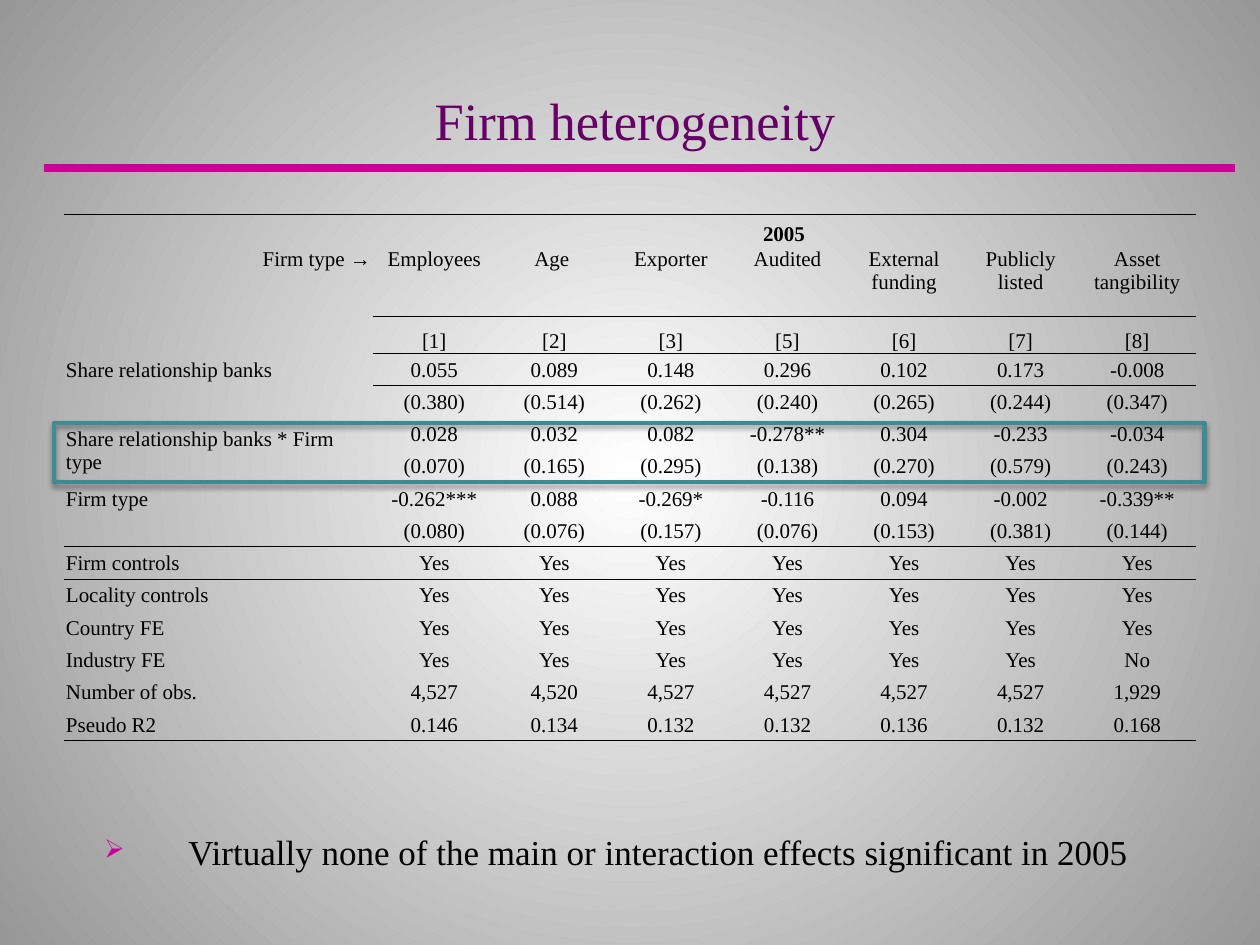
from dataclasses import dataclass
from typing import Any

from lxml import etree
from pptx import Presentation
from pptx import oxml
from pptx import util as u
from pptx.dml import color
from pptx.enum import shapes, text
from pptx.oxml import ns

BLACK, PURPLE, MAGENTA, TEAL = "000000", "660066", "CC0099", "3C8C93"
NO_STYLE = "{2D5ABB26-0587-4C30-8999-92F81FD0307C}"
FONT = "Times New Roman"
COLUMN_WIDTHS = [6.21, 2.49] + [2.35] * 6
ROW_HEIGHTS = [0.64, 1.42, 0.74] + [0.65] * 11 + [0.66]
YES = ["Yes"] * 7
RESULTS = [
    ["", "2005", "", "", "", "", "", ""],
    ["Firm type →", "Employees", "Age ", "Exporter", "Audited", "External funding", "Publicly listed",
     "Asset tangibility"],
    ["", "[1]", "[2]", "[3]", "[5]", "[6]", "[7]", "[8]"],
    ["Share relationship banks", "0.055", "0.089", "0.148", "0.296", "0.102", "0.173", "-0.008"],
    ["", "(0.380)", "(0.514)", "(0.262)", "(0.240)", "(0.265)", "(0.244)", "(0.347)"],
    ["Share relationship banks * Firm type", "0.028", "0.032", "0.082", "-0.278**", "0.304", "-0.233", "-0.034"],
    ["", "(0.070)", "(0.165)", "(0.295)", "(0.138)", "(0.270)", "(0.579)", "(0.243)"],
    ["Firm type", "-0.262***", "0.088", "-0.269*", "-0.116", "0.094", "-0.002", "-0.339**"],
    ["", "(0.080)", "(0.076)", "(0.157)", "(0.076)", "(0.153)", "(0.381)", "(0.144)"],
    ["Firm controls", *YES],
    ["Locality controls", *YES],
    ["Country FE", *YES],
    ["Industry FE", *YES[:-1], "No"],
    ["Number of obs.", "4,527", "4,520", "4,527", "4,527", "4,527", "4,527", "1,929"],
    ["Pseudo R2", "0.146", "0.134", "0.132", "0.132", "0.136", "0.132", "0.168"],
]


@dataclass
class Rule:
    boundary: int
    first_column: int
    points: float


@dataclass
class TextSpec:
    words: str
    place: tuple[float, float, float, float]
    points: float
    colour: str
    frame: dict[str, Any]
    para: dict[str, Any]


RULES = [Rule(0, 0, 1), Rule(2, 1, 0.5), Rule(3, 1, 0.5), Rule(9, 0, 0.5), Rule(15, 0, 1)]
TITLE = TextSpec("Firm heterogeneity", (0.84, 0.64, 23.93, 2.54), 30, PURPLE,
                 {"vertical_anchor": text.MSO_ANCHOR.BOTTOM}, {"alignment": text.PP_ALIGN.CENTER})
FINDING = TextSpec("Virtually none of the main or interaction effects significant in 2005",
                   (1.85, 16.54, 21.69, 1.19), 20, BLACK,
                   {"auto_size": text.MSO_AUTO_SIZE.SHAPE_TO_FIT_TEXT}, {"line_spacing": 1.1})


def cm(*lengths: float) -> list[u.Length]:
    return [u.Cm(length) for length in lengths]


def apply(target: Any, values: dict[str, Any]) -> None:
    for name, value in values.items():
        setattr(target, name, value)


def paint(fill: Any, colour: str) -> None:
    fill.solid()
    fill.fore_color.rgb = color.RGBColor.from_string(colour)


def add_xml(parent: Any, markup: str) -> None:
    root = oxml.parse_xml(f'<a:root {ns.nsdecls("a")}>{markup}</a:root>')
    for child in list(root):
        parent.append(child)
    etree.cleanup_namespaces(parent)


def write(para: Any, words: str, points: float, colour: str, bold: bool = False) -> None:
    span = para.add_run()
    span.text = words
    apply(span.font, {"name": FONT, "size": u.Pt(points), "bold": bold})
    paint(span.font.fill, colour)


def draw_background(page: Any) -> None:
    page.background.fill.gradient()
    gradient = page.background._cSld.find(".//" + ns.qn("a:gradFill"))
    for child in list(gradient):
        gradient.remove(child)
    add_xml(gradient, '<a:gsLst><a:gs pos="0"><a:srgbClr val="FFFFFF"/></a:gs>'
            '<a:gs pos="100000"><a:srgbClr val="979797"/></a:gs></a:gsLst><a:path path="circle">'
            '<a:fillToRect l="50000" t="50000" r="50000" b="50000"/></a:path>')


def draw_text(page: Any, item: TextSpec) -> Any:
    frame = page.shapes.add_textbox(*cm(*item.place)).text_frame
    apply(frame, {"word_wrap": True, **item.frame})
    para = frame.paragraphs[0]
    apply(para, item.para)
    write(para, item.words, item.points, item.colour)
    return para


def add_bullet(para: Any) -> None:
    props = para._p.get_or_add_pPr()
    for name, length in {"marL": u.Cm(1.7), "indent": u.Cm(-1.7)}.items():
        props.set(name, str(length))
    add_xml(props, '<a:spcBef><a:spcPct val="55000"/></a:spcBef>'
            f'<a:buClr><a:srgbClr val="{MAGENTA}"/></a:buClr><a:buSzPct val="75000"/><a:buChar char="➢"/>')


def draw_title_line(page: Any) -> None:
    line = page.shapes.add_connector(shapes.MSO_CONNECTOR.STRAIGHT, *cm(0.89, 3.38, 24.89, 3.38))
    paint(line.line.fill, MAGENTA)
    line.line.width = u.Pt(4.5)
    add_xml(line.element.spPr, "<a:effectLst/>")


def draw_rule(table: Any, rule: Rule) -> None:
    for row, side in ((rule.boundary - 1, "lnB"), (rule.boundary, "lnT")):
        if 0 <= row < len(RESULTS):
            for column in range(rule.first_column, len(COLUMN_WIDTHS)):
                add_xml(table.cell(row, column)._tc.get_or_add_tcPr(),
                        f'<a:{side} w="{u.Pt(rule.points)}"><a:solidFill><a:srgbClr val="{BLACK}"/>'
                        f'</a:solidFill></a:{side}>')


def fill_cell(cell: Any, row: int, column: int, words: str) -> None:
    anchors = {0: text.MSO_ANCHOR.BOTTOM, 1: text.MSO_ANCHOR.TOP, 2: text.MSO_ANCHOR.BOTTOM}
    apply(cell, {"margin_left": u.Cm(0.03), "margin_right": u.Cm(0.03), "margin_top": u.Cm(0.03),
                 "margin_bottom": 0, "vertical_anchor": anchors.get(row, text.MSO_ANCHOR.MIDDLE)})
    cell.fill.background()
    para = cell.text_frame.paragraphs[0]
    if column:
        para.alignment = text.PP_ALIGN.CENTER
    elif row == 1:
        para.alignment = text.PP_ALIGN.RIGHT
    if words:
        write(para, words, 12, BLACK, bold=row == 0)
    else:
        add_xml(para._p, '<a:endParaRPr sz="1200"/>')


def draw_results(page: Any) -> None:
    frame = page.shapes.add_table(len(RESULTS), len(COLUMN_WIDTHS),
                                  *cm(1.3, 4.32, sum(COLUMN_WIDTHS), sum(ROW_HEIGHTS)))
    table = frame.table
    apply(table, {"first_row": False, "horz_banding": False})
    frame.element.find(".//" + ns.qn("a:tableStyleId")).text = NO_STYLE
    for column, width in zip(table.columns, cm(*COLUMN_WIDTHS)):
        column.width = width
    for row, height in zip(table.rows, cm(*ROW_HEIGHTS)):
        row.height = height
    for rule in RULES:
        draw_rule(table, rule)
    for row, values in enumerate(RESULTS):
        for column, words in enumerate(values):
            fill_cell(table.cell(row, column), row, column, words)
    table.cell(0, 1).merge(table.cell(0, 7))
    table.cell(5, 0).merge(table.cell(6, 0))


def draw_highlight(page: Any) -> None:
    box = page.shapes.add_shape(shapes.MSO_SHAPE.RECTANGLE, *cm(1.09, 8.53, 23.19, 1.19))
    box.fill.background()
    paint(box.line.fill, TEAL)
    box.line.width = u.Pt(2.5)
    box.shadow.inherit = False
    add_xml(box.element.spPr.find(ns.qn("a:effectLst")),
            f'<a:outerShdw blurRad="{u.Pt(3.1)}" dist="{u.Pt(1.8)}" dir="5400000" rotWithShape="0">'
            f'<a:srgbClr val="{BLACK}"><a:alpha val="35000"/></a:srgbClr></a:outerShdw>')


def main() -> None:
    deck = Presentation()
    apply(deck, {"slide_width": u.Cm(25.4), "slide_height": u.Cm(19.05)})
    page = deck.slides.add_slide(deck.slide_layouts[6])
    draw_background(page)
    draw_text(page, TITLE)
    draw_title_line(page)
    add_bullet(draw_text(page, FINDING))
    draw_results(page)
    draw_highlight(page)
    deck.save("out.pptx")


if __name__ == "__main__":
    main()
